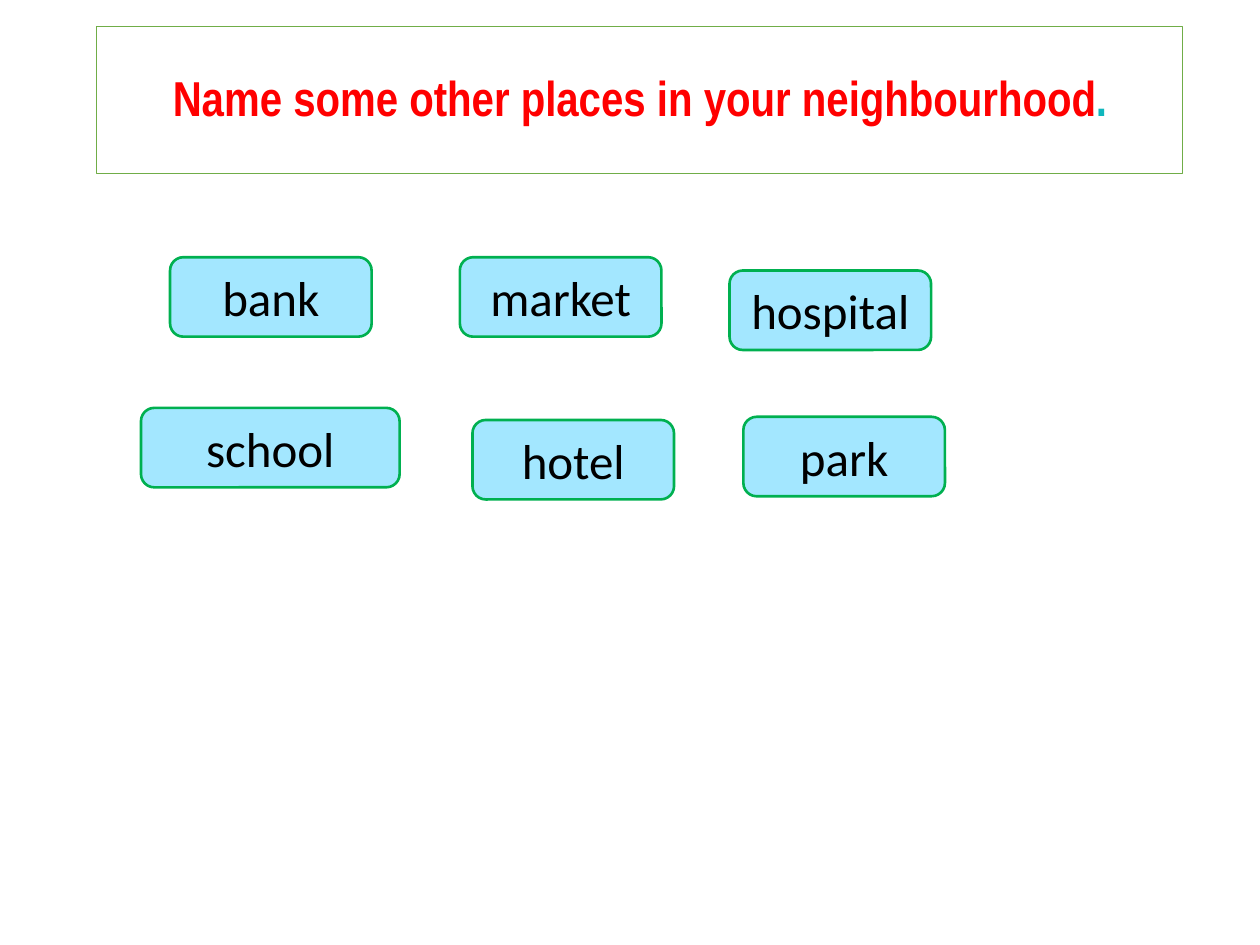
from pptx import Presentation
from pptx.dml.color import RGBColor
from pptx.enum.shapes import MSO_SHAPE
from pptx.enum.text import MSO_ANCHOR, MSO_AUTO_SIZE, PP_ALIGN
from pptx.util import Pt

ROUND = MSO_SHAPE.ROUNDED_RECTANGLE
MIDDLE = MSO_ANCHOR.MIDDLE
GROW = MSO_AUTO_SIZE.SHAPE_TO_FIT_TEXT
CENTER = PP_ALIGN.CENTER
TITLE_ONLY = 5


def color(value):
    return RGBColor.from_string(value)


class Board:
    size = 28
    width = 115.2
    height = 45.4

    def __init__(self, deck):
        self.slide = deck.slides.add_slide(deck.slide_layouts[TITLE_ONLY])

    def paint(self, shape, fill, line, weight):
        shape.fill.solid()
        shape.fill.fore_color.rgb = color(fill)
        shape.line.color.rgb = color(line)
        shape.line.width = Pt(weight)

    def frame(self, shape):
        frame = shape.text_frame
        frame.word_wrap = True
        frame.auto_size = GROW
        frame.vertical_anchor = MIDDLE
        frame.paragraphs[0].alignment = CENTER
        return frame

    def add_text(self, para, text, face, ink, bold=False):
        run = para.add_run()
        run.text = text
        run.font.name = face
        run.font.size = Pt(self.size)
        run.font.bold = bold
        run.font.color.rgb = color(ink)

    def title(self, runs):
        shape = self.slide.shapes.title
        shape.left, shape.top = Pt(55.4), Pt(38.2)
        shape.width, shape.height = Pt(620.6), Pt(38.2)
        self.paint(shape, "FFFFFF", "70AD47", 0.5)
        frame = self.frame(shape)
        frame.margin_top = frame.margin_bottom = Pt(15.5)
        para = frame.paragraphs[0]
        para.line_spacing = 0.9
        for text, ink in runs:
            self.add_text(para, text, "Arial Narrow", ink, True)

    def label(self, text, left, top, width=width):
        shape = self.slide.shapes.add_shape(
            ROUND, Pt(left), Pt(top), Pt(width), Pt(self.height))
        shape.shadow.inherit = False
        self.paint(shape, "A3E7FF", "00B050", 1.5)
        para = self.frame(shape).paragraphs[0]
        self.add_text(para, text, "Calibri", "000000")


def main():
    deck = Presentation()
    deck.slide_width, deck.slide_height = Pt(720), Pt(540)
    board = Board(deck)
    board.title([
        ("Name some other places in your neighbourhood", "FF0000"),
        (".", "0FB7BD"),
    ])
    board.label("hospital", 416.9, 154.6)
    board.label("bank", 97.2, 147)
    board.label("school", 80.6, 233.1, 147.8)
    board.label("market", 262.8, 147)
    board.label("hotel", 270, 240)
    board.label("park", 424.8, 238.2)
    deck.save("out.pptx")


if __name__ == "__main__":
    main()
